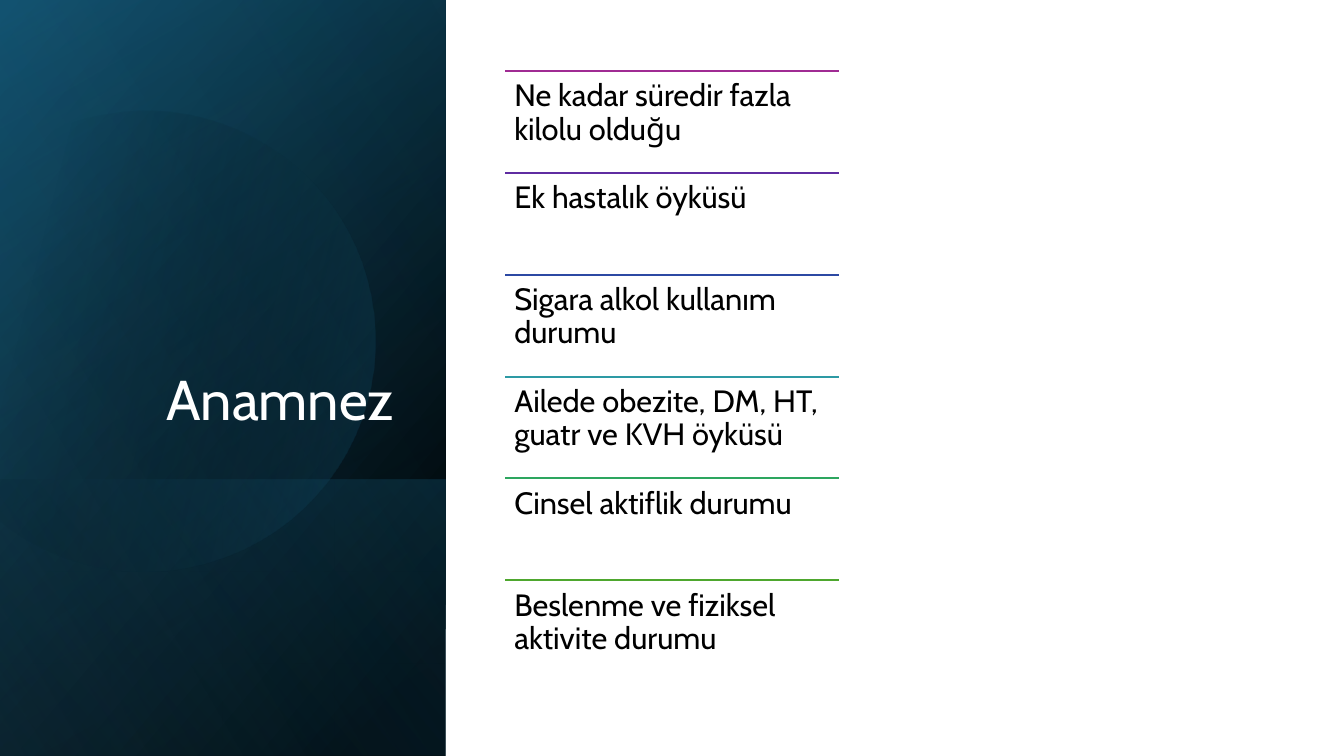
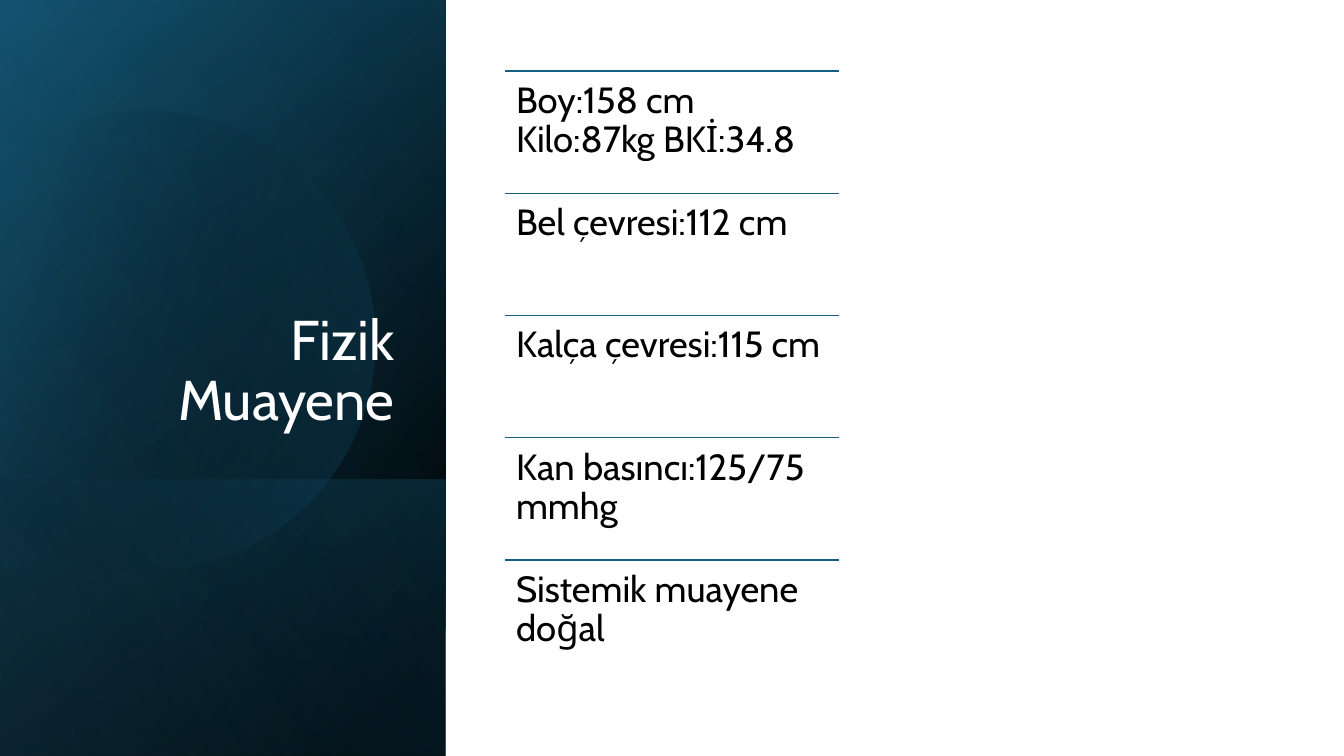
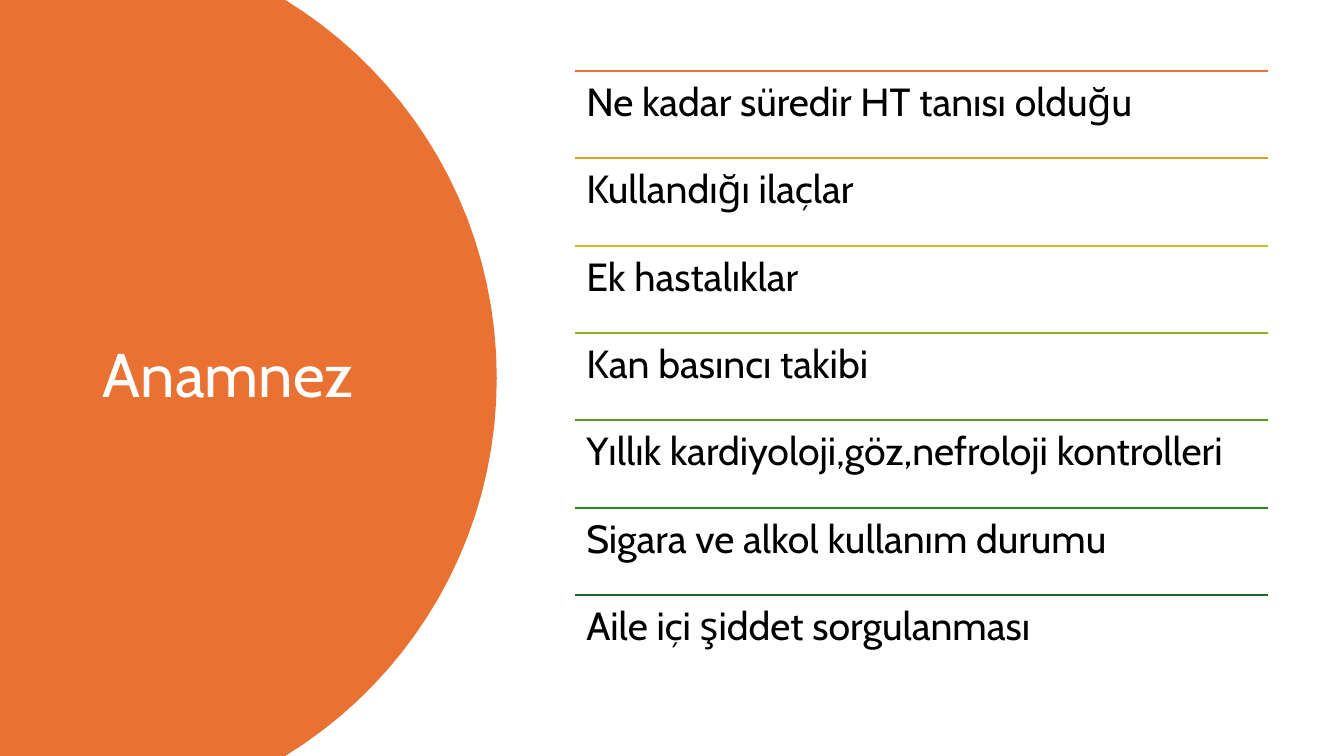
"""Builds three patient-assessment slides: a title panel with a ruled list beside it."""
import math

import lxml.etree
import pptx
import pptx.dml.color
import pptx.enum.shapes
import pptx.enum.text
import pptx.oxml.ns
import pptx.util

Cm = pptx.util.Cm
Pt = pptx.util.Pt
qn = pptx.oxml.ns.qn
ALIGN = pptx.enum.text.PP_ALIGN
ANCHOR = pptx.enum.text.MSO_ANCHOR

FONT = "Cabin"
WHITE, BLACK, ORANGE, TEAL = "FFFFFF", "000000", "E97132", "156082"
SLIDE_W, SLIDE_H = 33.87, 19.05
PANEL_W = 11.23
LIST_TOP, LIST_H = 1.79, 15.4
CURVE_STEPS = 20

FULL_PANEL = (0, 0, PANEL_W, SLIDE_H)
LOWER_PANEL = (0, 12.09, PANEL_W, 6.96)
BASE_PANELS = [
    (FULL_PANEL, 50, [(8, BLACK, 100), (100, "104862", 100)]),
    (FULL_PANEL, 30, [(0, BLACK, 0), (99, TEAL, 46)]),
    (LOWER_PANEL, 130, [(2, TEAL, 29), (100, BLACK, 30)]),
]
GLOW_PANEL = (FULL_PANEL, 120, [(0, BLACK, 0), (99, "46B1E1", 11)])

DISC_GRADIENT = (30, [(29, BLACK, 0), (100, TEAL, 43)])
DISC_ROTATION = 343.9
DISC_CENTRE = (4.03, 8.5)
DISC = [
    (3.78, 2.79),
    (6.25, 2.84, 8.51, 4.5, 9.22, 6.98),
    (10.11, 10.08, 8.33, 13.28, 5.26, 14.17),
    (3.33, 14.73, 1.35, 14.25, -0.08, 13.06),
    (-0.38, 12.78),
    (-0.38, 4.44),
    (0, 4.09),
    (0.58, 3.61, 1.27, 3.25, 2.03, 3.02),
    (2.62, 2.87, 3.2, 2.79, 3.78, 2.79),
]
HALF_DISC = [
    (0, 0),
    (7.19, 0),
    (10.39, 1.96, 12.52, 5.49, 12.52, 9.53),
    (12.52, 13.56, 10.39, 17.09, 7.19, SLIDE_H),
    (0, SLIDE_H),
]

DARK = dict(title_box=(1.3, 1.63, 8.89, 9.4), title_size=40,
            align=ALIGN.RIGHT, anchor=ANCHOR.BOTTOM, left=12.73, width=8.41)
BRIGHT = dict(title_box=(2.34, 1.78, 8.2, 15.47), title_size=44,
              align=ALIGN.LEFT, anchor=ANCHOR.MIDDLE, left=14.48, width=17.48)

HISTORY = [
    ("Ne kadar süredir fazla kilolu olduğu", "A02B93"),
    ("Ek hastalık öyküsü", "5F2CA1"),
    ("Sigara alkol kullanım durumu", "2C49A3"),
    ("Ailede obezite, DM, HT, guatr ve KVH öyküsü", "2D9AA4"),
    ("Cinsel aktiflik durumu", "2DA65F"),
    ("Beslenme ve fiziksel aktivite durumu", "4EA72E"),
]
EXAMINATION = [(text, TEAL) for text in (
    "Boy:158 cm Kilo:87kg BKİ:34.8",
    "Bel çevresi:112 cm",
    "Kalça çevresi:115 cm",
    "Kan basıncı:125/75 mmhg",
    "Sistemik muayene doğal",
)]
HYPERTENSION = [
    ("Ne kadar süredir HT tanısı olduğu", ORANGE),
    ("Kullandığı ilaçlar", "E39D1F"),
    ("Ek hastalıklar", "CBC11E"),
    ("Kan basıncı takibi", "8EB21E"),
    ("Yıllık kardiyoloji,göz,nefroloji kontrolleri", "56991D"),
    ("Sigara ve alkol kullanım durumu", "2C821B"),
    ("Aile içi şiddet sorgulanması", "196B24"),
]


def rgb(colour):
    return pptx.dml.color.RGBColor.from_string(colour)


def fill_gradient(sp, angle, stops):
    sp.fill.gradient()
    sp.fill.gradient_angle = 360 - angle
    for stop, (position, colour, _) in zip(sp.fill.gradient_stops, stops):
        stop.position = position / 100
        stop.color.rgb = rgb(colour)
    for clr, (_, _, alpha) in zip(list(sp.element.spPr.iter(qn("a:srgbClr"))), stops):
        if alpha < 100:
            lxml.etree.SubElement(clr, qn("a:alpha"), val=str(alpha * 1000))


def make_plain(sp):
    sp.shadow.inherit = False
    sp.line.fill.background()


def add_panel(slide, box, angle, stops):
    x, y, w, h = box
    sp = slide.shapes.add_shape(
        pptx.enum.shapes.MSO_SHAPE.RECTANGLE,
        Cm(x + (w - h) / 2), Cm(y + (h - w) / 2), Cm(h), Cm(w))
    sp.rotation = 90
    sp.element.spPr.find(qn("a:xfrm")).set("flipH", "1")
    make_plain(sp)
    fill_gradient(sp, angle, stops)


def trace(outline):
    points = []
    for segment in outline:
        if len(segment) == 2:
            points.append(segment)
            continue
        knots = [points[-1], segment[:2], segment[2:4], segment[4:]]
        for step in range(1, CURVE_STEPS + 1):
            t = step / CURVE_STEPS
            weights = [math.comb(3, k) * t ** k * (1 - t) ** (3 - k) for k in range(4)]
            points.append(tuple(sum(w * knot[axis] for w, knot in zip(weights, knots))
                                for axis in (0, 1)))
    return points


def turn(point, centre, degrees):
    a = math.radians(degrees)
    dx, dy = point[0] - centre[0], point[1] - centre[1]
    return (centre[0] + dx * math.cos(a) - dy * math.sin(a),
            centre[1] + dx * math.sin(a) + dy * math.cos(a))


def add_outline(slide, points):
    (x, y), *rest = [(Cm(px), Cm(py)) for px, py in points]
    builder = slide.shapes.build_freeform(x, y)
    builder.add_line_segments(rest, close=True)
    sp = builder.convert_to_shape()
    make_plain(sp)
    return sp


def draw_dark_panel(slide):
    for panel in BASE_PANELS:
        add_panel(slide, *panel)
    sp = add_outline(slide, [turn(p, DISC_CENTRE, -DISC_ROTATION) for p in trace(DISC)])
    sp.rotation = DISC_ROTATION
    fill_gradient(sp, *DISC_GRADIENT)
    add_panel(slide, *GLOW_PANEL)


def draw_half_disc(slide):
    sp = add_outline(slide, trace(HALF_DISC))
    sp.fill.solid()
    sp.fill.fore_color.rgb = rgb(ORANGE)


def set_text(sp, text, size, colour, align, anchor):
    tf = sp.text_frame
    tf.text = text
    tf.word_wrap = True
    tf.auto_size = pptx.enum.text.MSO_AUTO_SIZE.NONE
    tf.vertical_anchor = anchor
    p = tf.paragraphs[0]
    p.alignment = align
    p.line_spacing = 0.9
    r = p.runs[0]
    r.font.name = FONT
    r.font.size = Pt(size)
    r.font.color.rgb = rgb(colour)
    return tf


def place_title(slide, text, style):
    title = slide.shapes.title
    title.left, title.top, title.width, title.height = map(Cm, style["title_box"])
    set_text(title, text, style["title_size"], WHITE, style["align"], style["anchor"])
    title.element.getparent().append(title.element)


def add_ruled_list(slide, rows, style, size, rule_width):
    left, width = style["left"], style["width"]
    pitch = LIST_H / len(rows)
    for i, (text, colour) in enumerate(rows):
        y = LIST_TOP + i * pitch
        rule = slide.shapes.add_connector(
            pptx.enum.shapes.MSO_CONNECTOR.STRAIGHT,
            Cm(left), Cm(y), Cm(left + width), Cm(y))
        rule.line.color.rgb = rgb(colour)
        rule.line.width = Pt(rule_width)
        lxml.etree.SubElement(rule.element.spPr, qn("a:effectLst"))
        box = slide.shapes.add_textbox(Cm(left), Cm(y), Cm(width), Cm(pitch))
        tf = set_text(box, text, size, BLACK, ALIGN.LEFT, ANCHOR.TOP)
        tf.margin_left = tf.margin_right = tf.margin_top = tf.margin_bottom = Pt(size * 0.3)


SLIDES = [
    ("Anamnez", draw_dark_panel, DARK, HISTORY, 22, 1.5),
    ("Fizik Muayene", draw_dark_panel, DARK, EXAMINATION, 26, 1),
    ("Anamnez", draw_half_disc, BRIGHT, HYPERTENSION, 28, 1.5),
]


def main():
    prs = pptx.Presentation()
    prs.slide_width, prs.slide_height = Cm(SLIDE_W), Cm(SLIDE_H)
    for title, draw_backdrop, style, rows, size, rule_width in SLIDES:
        slide = prs.slides.add_slide(prs.slide_layouts[5])
        draw_backdrop(slide)
        place_title(slide, title, style)
        add_ruled_list(slide, rows, style, size, rule_width)
    prs.save("out.pptx")


if __name__ == "__main__":
    main()
